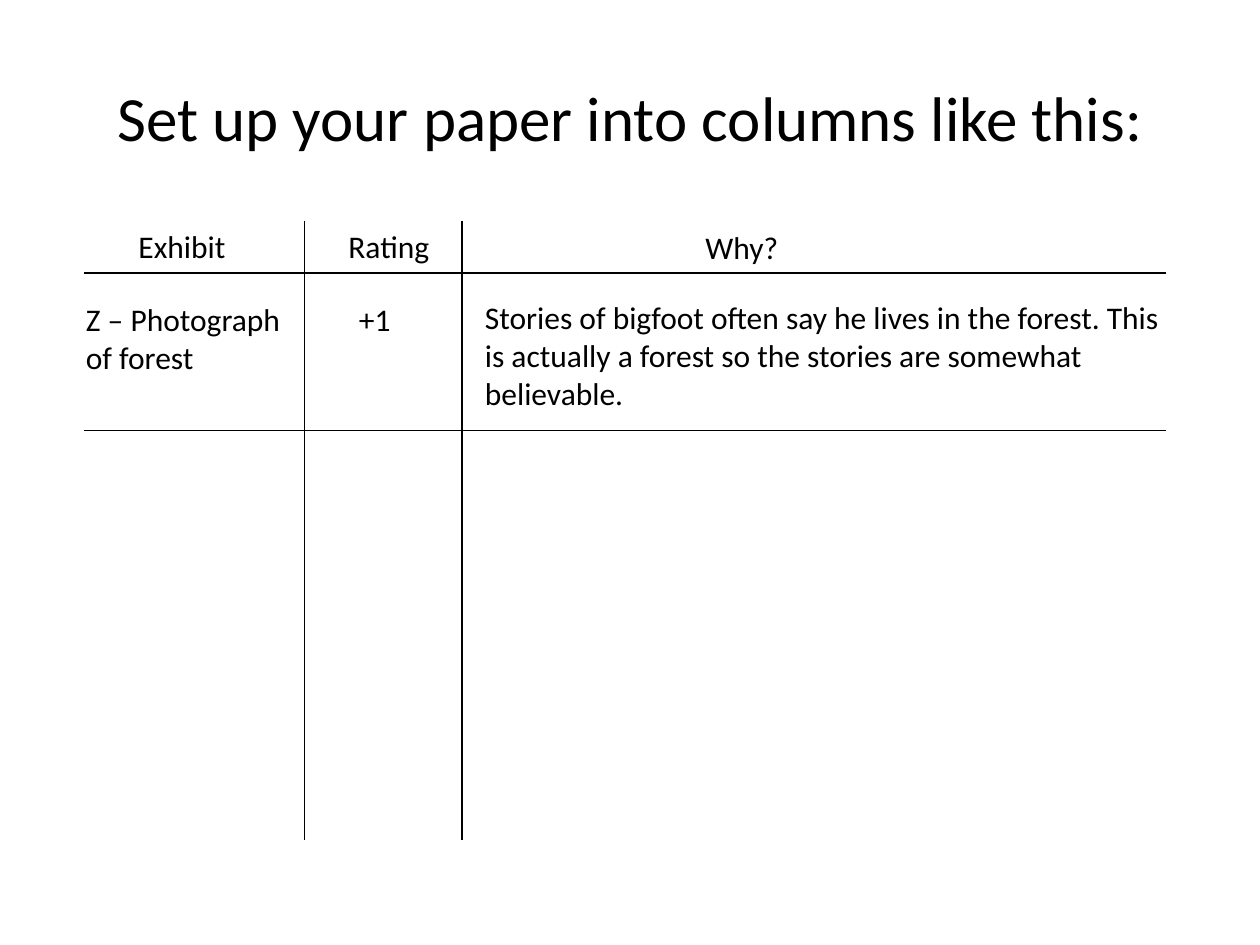
from lxml import etree
from pptx import Presentation
from pptx.dml.color import RGBColor
from pptx.enum import shapes, text
from pptx.oxml.ns import qn
from pptx.util import Pt

BLACK = RGBColor(0, 0, 0)
WHITE = RGBColor(255, 255, 255)
FONT = "Calibri"


def add_text(s, content, x, y, w, h, size=18, align=text.PP_ALIGN.LEFT,
             anchor=text.MSO_ANCHOR.TOP, fit=text.MSO_AUTO_SIZE.SHAPE_TO_FIT_TEXT):
    sp = s.shapes.add_textbox(Pt(x), Pt(y), Pt(w), Pt(h))
    tf = sp.text_frame
    tf.word_wrap = True
    tf.auto_size = fit
    tf.vertical_anchor = anchor
    tf.text = content
    for p in tf.paragraphs:
        p.alignment = align
        for r in p.runs:
            r.font.name, r.font.size = FONT, Pt(size)
            r.font.color.rgb = BLACK


def add_rule(s, x1, y1, x2, y2):
    ln = s.shapes.add_connector(shapes.MSO_CONNECTOR.STRAIGHT,
                                Pt(x1), Pt(y1), Pt(x2), Pt(y2))
    ln.line.color.rgb = BLACK
    ln.line.width = Pt(0.75)
    etree.SubElement(ln._element.spPr, qn("a:effectLst"))


def add_title(s, x, y, w, h):
    add_text(s, "Set up your paper into columns like this:", x, y, w, h, size=36,
             align=text.PP_ALIGN.CENTER, anchor=text.MSO_ANCHOR.MIDDLE,
             fit=text.MSO_AUTO_SIZE.NONE)


def add_columns(s, x, y, w, h):
    # Ruled lines of the sheet
    for dy in (30, 120):
        add_rule(s, x, y + dy, x + w, y + dy)
    for dx in (126, 216):
        add_rule(s, x + dx, y, x + dx, y + h)

    # Column headings
    for label, dx, dy in (("Exhibit", 24, 0), ("Rating", 144, 0), ("Why?", 348, 0.7)):
        add_text(s, label, x + dx, y + dy, 126, 29)

    # Sample entry
    add_text(s, "Z – Photograph\nof forest", x - 6, y + 42, 126, 51)
    add_text(s, "+1", x + 150, y + 42, 126, 29)
    add_text(s, "Stories of bigfoot often say he lives in the forest. This is actually "
                "a forest so the stories are somewhat believable.",
             x + 222, y + 41, 408, 73)


def main():
    prs = Presentation()
    prs.slide_width, prs.slide_height = Pt(720), Pt(540)
    s = prs.slides.add_slide(prs.slide_layouts[6])
    s.background.fill.solid()
    s.background.fill.fore_color.rgb = WHITE
    add_title(s, 36, 21.6, 648, 90)
    add_columns(s, 48, 126, 618, 354)
    prs.save("out.pptx")


if __name__ == "__main__":
    main()
